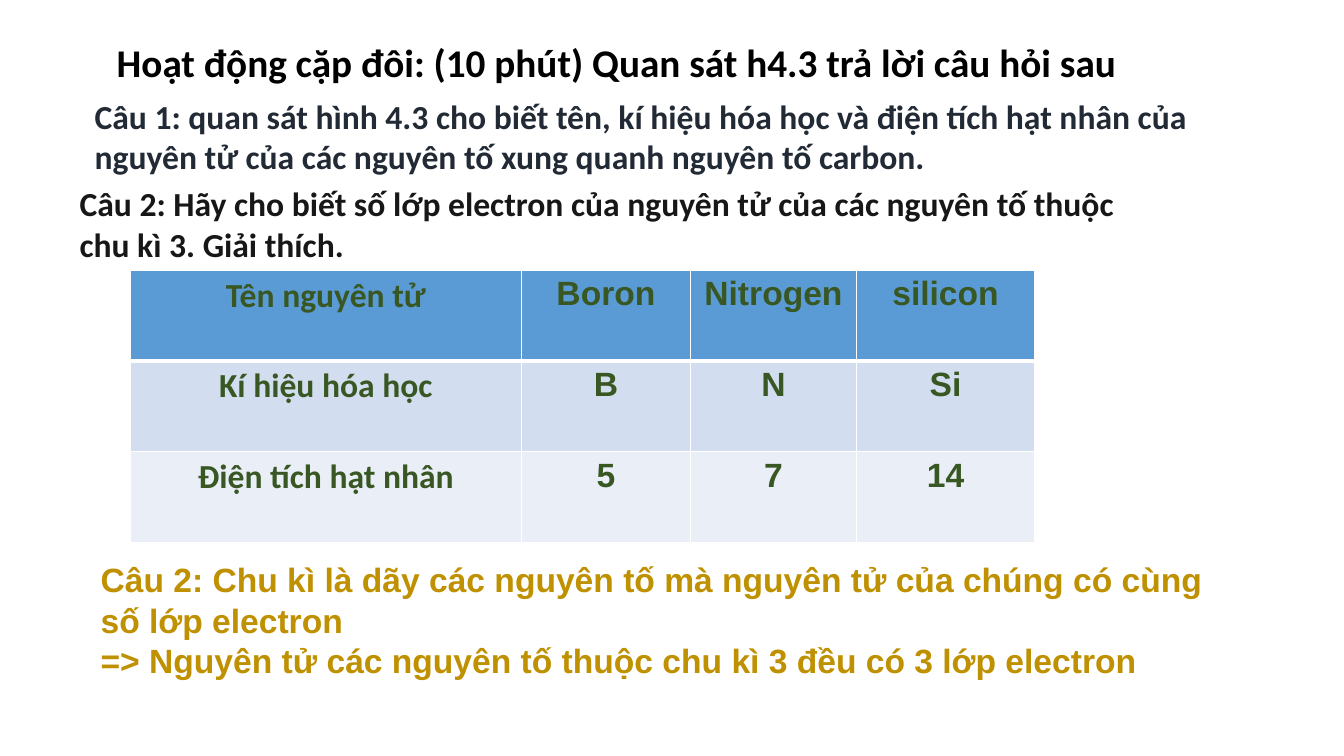
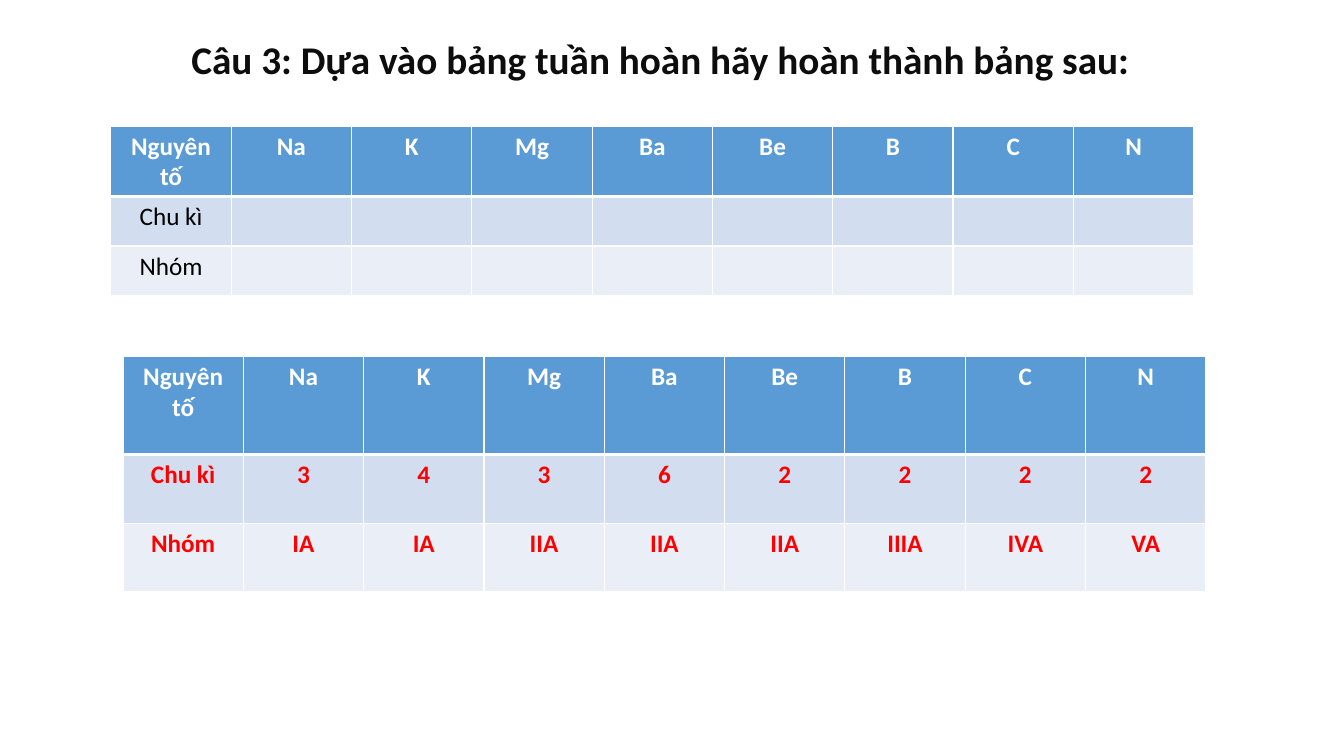
from dataclasses import dataclass

from lxml import etree
from pptx import Presentation
from pptx import util as u
from pptx.dml import color
from pptx.enum import text
from pptx.oxml import ns

WIDE, HIGH = u.Inches(13.33), u.Inches(7.5)


@dataclass(frozen=True)
class Theme:
    """Colours, fonts and type sizes of the deck."""
    body: str = "Calibri"
    plain: str = "Arial"
    title: int = 28
    text: int = 24
    small: int = 18
    black: str = "000000"
    ink: str = "0D0D0D"
    navy: str = "222A35"
    coal: str = "181717"
    green: str = "385723"
    gold: str = "BF9000"
    red: str = "FF0000"
    white: str = "FFFFFF"
    rows: tuple = ("5B9BD5", "D2DEEF", "EAEFF7")


T = Theme()


def style(size, tint, name=T.body, bold=True):
    """Return the format values of a text."""
    return {"size": u.Pt(size), "name": name, "bold": bold, "tint": tint}


def scale(box):
    """Turn percentages of the slide into lengths."""
    return [int(part * side / 100) for part, side in zip(box, (WIDE, HIGH) * 2)]


def write(para, words, form):
    """Put words into a paragraph and format them."""
    run = para.add_run()
    run.text = words
    for key, value in form.items():
        if key == "tint":
            run.font.color.rgb = color.RGBColor.from_string(value)
        else:
            setattr(run.font, key, value)


def note(slide, box, lines, form):
    """Place a wrapped text box with one paragraph for each line."""
    frame = slide.shapes.add_textbox(*scale(box)).text_frame
    frame.word_wrap = True
    for i, line in enumerate(lines):
        para = frame.add_paragraph() if i else frame.paragraphs[0]
        write(para, line, form)


def edge(cell, row):
    """Draw white cell borders, thick below the header row."""
    props = cell._tc.get_or_add_tcPr()
    thick = {0: "B", 1: "T"}.get(row)
    for side in "LRTB":
        width = u.Pt(3 if side == thick else 1)
        line = etree.SubElement(props, ns.qn(f"a:ln{side}"), w=str(int(width)))
        fill = etree.SubElement(line, ns.qn("a:solidFill"))
        etree.SubElement(fill, ns.qn("a:srgbClr"), val=T.white)


def grid(slide, box, cols, rows, data, form):
    """Place a table with weighted columns and rows; form(row, col) styles a cell."""
    left, top, width, height = scale(box)
    table = slide.shapes.add_table(
        len(rows), len(cols), left, top, width, height).table
    for col, part in zip(table.columns, cols):
        col.width = int(width * part / sum(cols))
    for row, part in zip(table.rows, rows):
        row.height = int(height * part / sum(rows))
    for r, line in enumerate(data):
        for c, words in enumerate(line):
            cell = table.cell(r, c)
            edge(cell, r)
            cell.fill.solid()
            cell.fill.fore_color.rgb = color.RGBColor.from_string(T.rows[r])
            para = cell.text_frame.paragraphs[0]
            para.alignment = text.PP_ALIGN.CENTER
            if words:
                write(para, words, form(r, c))


def pairs(slide):
    """Build the pair activity: questions, atom table and answer."""
    note(slide, (7.95, 4.4, 79.82, 7.6),
         ["Hoạt động cặp đôi: (10 phút) Quan sát h4.3 trả lời câu hỏi sau"],
         style(T.title, T.black))
    note(slide, (6.3, 12, 83.12, 12.13),
         ["Câu 1: quan sát hình 4.3 cho biết tên, kí hiệu hóa học và điện tích "
          "hạt nhân của nguyên tử của các nguyên tố xung quanh nguyên tố carbon."],
         style(T.text, T.navy))
    note(slide, (5.18, 23.6, 81.62, 12.13),
         ["Câu 2: Hãy cho biết số lớp electron của nguyên tử của các nguyên tố "
          "thuộc chu kì 3. Giải thích."],
         style(T.text, T.coal))
    atoms = [("Tên nguyên tử", "Boron", "Nitrogen", "silicon"),
             ("Kí hiệu hóa học", "B", "N", "Si"),
             ("Điện tích hạt nhân", "5", "7", "14")]
    grid(slide, (9.68, 35.73, 67.29, 36), (3.88, 1.67, 1.65, 1.76), (1, 1, 1),
         atoms,
         lambda r, c: style(T.text, T.green, T.plain if c else T.body))
    note(slide, (6.75, 73.33, 86.27, 17.47),
         ["Câu 2: Chu kì là dãy các nguyên tố mà nguyên tử của chúng có cùng "
          "số lớp electron",
          "=> Nguyên tử các nguyên tố thuộc chu kì 3 đều có 3 lớp electron"],
         style(T.text, T.gold, T.plain))


def fill_in(slide):
    """Build the element exercise: an empty table above the solved one."""
    note(slide, (13.5, 4, 76.22, 7.6),
         ["Câu 3: Dựa vào bảng tuần hoàn hãy hoàn thành bảng sau:"],
         style(T.title, T.ink))
    head = ["Nguyên tố", "Na", "K", "Mg", "Ba", "Be", "B", "C", "N"]
    names = ["Chu kì", "Nhóm"]
    solved = ["3 4 3 6 2 2 2 2".split(),
              "IA IA IIA IIA IIA IIIA IVA VA".split()]
    blank = [[""] * len(line) for line in solved]
    for box, rows, found, tint, bold in (
            ((8.25, 16.67, 80.57, 22.4), (0.7, 0.49, 0.49), blank, T.black, False),
            ((9.15, 47.2, 80.57, 31.07), (0.97, 0.68, 0.68), solved, T.red, True)):
        data = [head] + [[name] + line for name, line in zip(names, found)]
        looks = [style(T.small, T.white)] + [style(T.small, tint, bold=bold)] * 2
        grid(slide, box, [1] * len(head), rows, data,
             lambda r, c, looks=looks: looks[r])


def main():
    """Build and save the deck."""
    deck = Presentation()
    deck.slide_width, deck.slide_height = WIDE, HIGH
    for build in (pairs, fill_in):
        build(deck.slides.add_slide(deck.slide_layouts[6]))
    deck.save("out.pptx")


if __name__ == "__main__":
    main()
